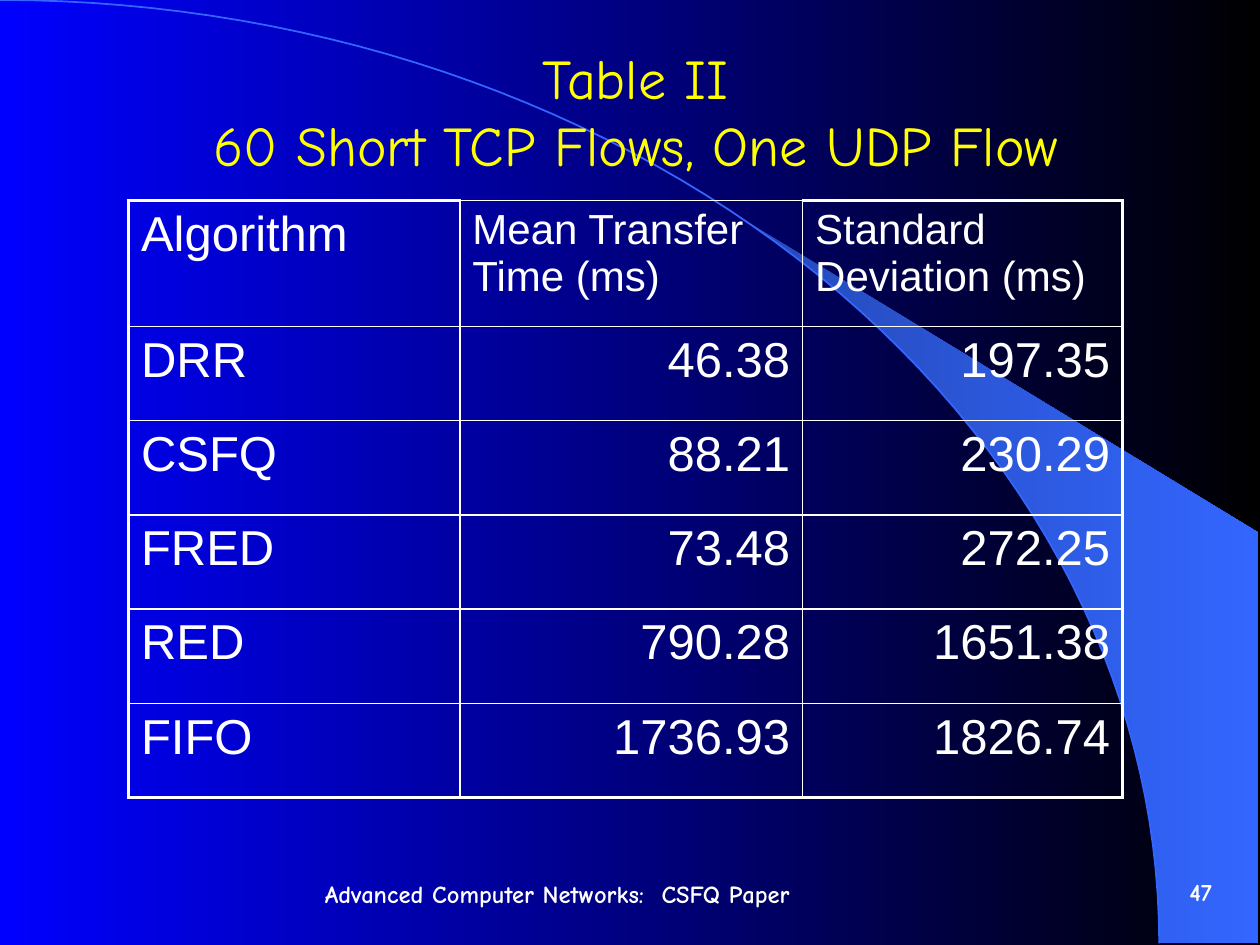
import math
from dataclasses import dataclass

import pptx
import pptx.dml.color
import pptx.enum.text
import pptx.oxml
import pptx.oxml.ns
import pptx.util
from pptx.util import Cm

ALIGN = pptx.enum.text.PP_ALIGN
ANCHOR = pptx.enum.text.MSO_ANCHOR


@dataclass(frozen=True)
class Theme:
    background: tuple = ("0000FF", "000000")
    beam: tuple = ("2449B6", "3366FF")
    arc: str = "3366FF"
    title: str = "FFFF00"
    text: str = "FFFFFF"
    display_font: str = "Comic Neue"
    table_font: str = "Arial"
    title_size: float = 32
    body_size: float = 28
    header_size: float = 24
    footer_size: float = 14
    thin: float = 1
    thick: float = 2.25


@dataclass(frozen=True)
class Label:
    text: str
    left: float
    top: float
    width: float
    height: float
    size: float
    color: str
    bold: bool
    align: ALIGN


THEME = Theme()
ARC_WIDTH, ARC_HEIGHT = 23.37, 19.02
BEAM_START, BEAM_RIGHT, BEAM_TOP = 14.96, 25.37, 10.74

LABELS = [
    Label("Advanced Computer Networks:  CSFQ Paper", 6.3, 17.53, 12.4, 0.99,
          THEME.footer_size, THEME.text, True, ALIGN.LEFT),
    Label("47", 20.9, 17.32, 3.78, 1.3,
          THEME.footer_size, THEME.text, True, ALIGN.RIGHT),
    Label("Table II\n60 Short TCP Flows, One UDP Flow", 1.07, 0.64, 23.5, 3.18,
          THEME.title_size, THEME.title, False, ALIGN.CENTER),
]

COLUMN_WIDTHS = [6.68, 6.91, 6.45]
HEADER_HEIGHT, ROW_HEIGHT = 2.54, 1.9
RESULTS = [
    ("Algorithm", "Mean Transfer Time (ms)", "Standard Deviation (ms)"),
    ("DRR", "46.38", "197.35"),
    ("CSFQ", "88.21", "230.29"),
    ("FRED", "73.48", "272.25"),
    ("RED", "790.28", "1651.38"),
    ("FIFO", "1736.93", "1826.74"),
]


def rgb(color: str) -> pptx.dml.color.RGBColor:
    return pptx.dml.color.RGBColor.from_string(color)


def write_text(text_frame, text: str, *, font: str, size: float, color: str,
               bold: bool = False, align: ALIGN = ALIGN.LEFT) -> None:
    paragraph = text_frame.paragraphs[0]
    paragraph.text = text
    paragraph.alignment = align
    for run in paragraph.runs:
        run.font.name = font
        run.font.size = pptx.util.Pt(size)
        run.font.bold = bold
        run.font.color.rgb = rgb(color)


def fill_gradient(fill, colors: tuple) -> None:
    fill.gradient()
    fill.gradient_angle = 0
    for stop, color in zip(fill.gradient_stops, colors):
        stop.color.rgb = rgb(color)


def arc_points(start_x: float, steps: int = 60) -> list:
    """Points on the quarter ellipse from start_x to its lower right end."""
    start = math.asin(start_x / ARC_WIDTH)
    angles = [start + (math.pi / 2 - start) * i / steps for i in range(steps + 1)]
    return [(ARC_WIDTH * math.sin(a), ARC_HEIGHT * (1 - math.cos(a))) for a in angles]


def add_outline(slide, points: list, close: bool):
    corners = [(Cm(x), Cm(y)) for x, y in points]
    builder = slide.shapes.build_freeform(*corners[0])
    builder.add_line_segments(corners[1:], close=close)
    shape = builder.convert_to_shape()
    shape.shadow.inherit = False
    return shape


def add_label(slide, label: Label) -> None:
    box = slide.shapes.add_textbox(Cm(label.left), Cm(label.top),
                                   Cm(label.width), Cm(label.height))
    box.text_frame.word_wrap = True
    box.text_frame.vertical_anchor = ANCHOR.MIDDLE
    write_text(box.text_frame, label.text, font=THEME.display_font, size=label.size,
               color=label.color, bold=label.bold, align=label.align)


def set_borders(cell, widths: dict) -> None:
    properties = cell._tc.get_or_add_tcPr()
    for index, side in enumerate("LRTB"):
        properties.insert(index, pptx.oxml.parse_xml(
            f'<a:ln{side} {pptx.oxml.ns.nsdecls("a")} w="{pptx.util.Pt(widths[side])}">'
            f'<a:solidFill><a:srgbClr val="{THEME.text}"/></a:solidFill></a:ln{side}>'))


def add_results_table(slide) -> None:
    heights = [HEADER_HEIGHT] + [ROW_HEIGHT] * (len(RESULTS) - 1)
    table = slide.shapes.add_table(
        len(RESULTS), len(COLUMN_WIDTHS), Cm(2.59), Cm(4.04),
        Cm(sum(COLUMN_WIDTHS)), Cm(sum(heights))).table
    table.first_row = table.horz_banding = False
    for column, width in zip(table.columns, COLUMN_WIDTHS):
        column.width = Cm(width)
    last_row, last_column = len(RESULTS) - 1, len(COLUMN_WIDTHS) - 1
    for r, (row, height) in enumerate(zip(table.rows, heights)):
        row.height = Cm(height)
        for c, cell in enumerate(row.cells):
            small = r == 0 and c > 0
            number = r > 0 and c > 0
            write_text(cell.text_frame, RESULTS[r][c], font=THEME.table_font,
                       size=THEME.header_size if small else THEME.body_size,
                       color=THEME.text, align=ALIGN.RIGHT if number else ALIGN.LEFT)
            cell.fill.background()
            # Heavy frame, except above the middle heading
            heavy = {"L": c == 0, "R": c == last_column,
                     "T": r == 0 and c != 1, "B": r == last_row}
            set_borders(cell, {side: THEME.thick if is_heavy else THEME.thin
                               for side, is_heavy in heavy.items()})


def main() -> None:
    presentation = pptx.Presentation()
    presentation.slide_width, presentation.slide_height = Cm(25.4), Cm(19.05)
    slide = presentation.slides.add_slide(presentation.slide_layouts[6])

    # Background with light beam and arc
    fill_gradient(slide.background.fill, THEME.background)
    beam = add_outline(slide, [(BEAM_RIGHT, ARC_HEIGHT), (BEAM_RIGHT, BEAM_TOP)]
                       + arc_points(BEAM_START), close=True)
    fill_gradient(beam.fill, THEME.beam)
    beam.line.fill.background()
    arc = add_outline(slide, arc_points(0), close=False)
    arc.fill.background()
    arc.line.color.rgb = rgb(THEME.arc)
    arc.line.width = pptx.util.Pt(THEME.thin)

    # Footer, slide number and title
    for label in LABELS:
        add_label(slide, label)

    # Results
    add_results_table(slide)
    presentation.save("out.pptx")


if __name__ == "__main__":
    main()
